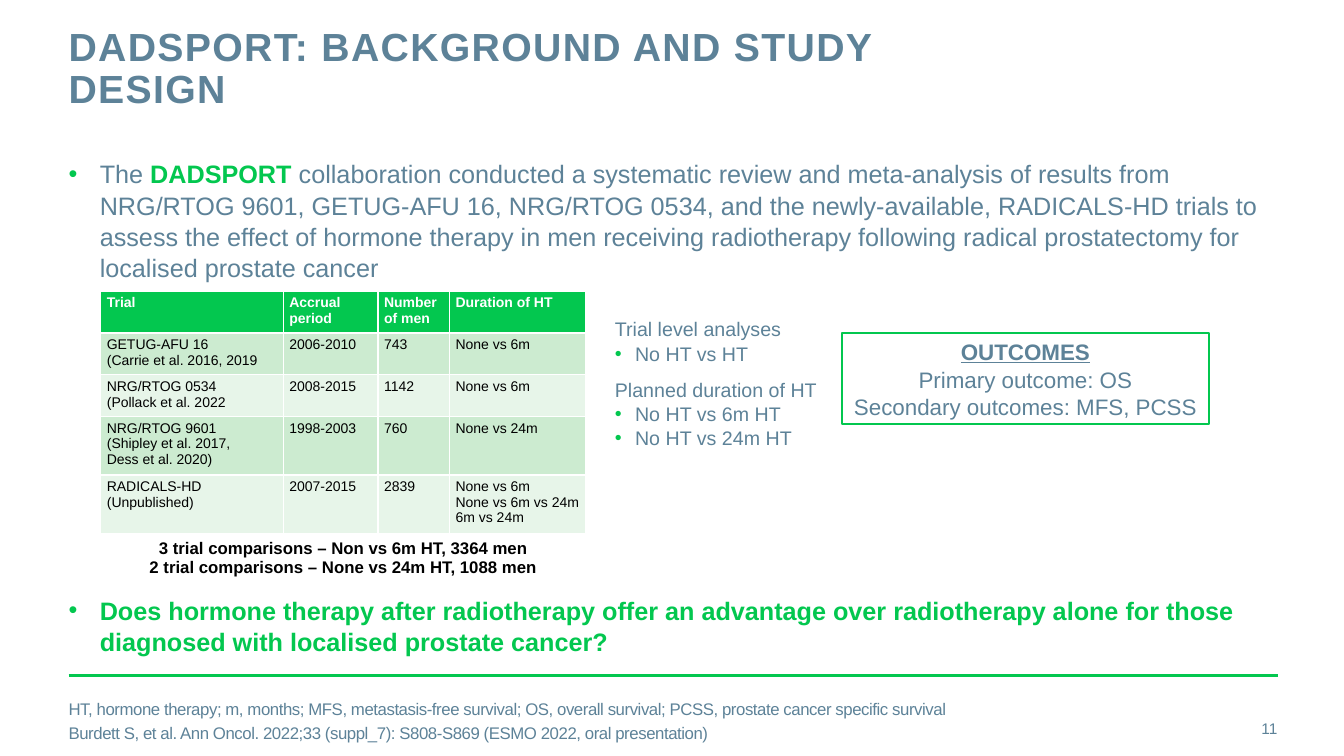
from lxml import etree
from pptx import Presentation
from pptx.dml.color import RGBColor
from pptx.enum.shapes import MSO_CONNECTOR, MSO_SHAPE
from pptx.enum.text import MSO_ANCHOR, MSO_AUTO_SIZE, PP_ALIGN
from pptx.oxml.ns import qn
from pptx.util import Inches, Pt

GREEN = RGBColor(0x03, 0xC7, 0x4F)
SLATE = RGBColor(0x5D, 0x82, 0x98)
BAND_DARK = RGBColor(0xCC, 0xEB, 0xD0)
BAND_LIGHT = RGBColor(0xE7, 0xF5, 0xE9)
WHITE = RGBColor(0xFF, 0xFF, 0xFF)
BLACK = RGBColor(0, 0, 0)


def add_text(paragraph, text, size, color=SLATE, bold=False, spacing=0):
    """Add one run per line of text, with line breaks between; spacing is in points."""
    for number, line in enumerate(text.split("\n")):
        if number:
            paragraph.add_line_break()
        run = paragraph.add_run()
        run.text = line
        run.font.name = "Arial"
        run.font.size = Pt(size)
        run.font.color.rgb = color
        run.font.bold = bold
        if spacing:
            run.font._element.set("spc", str(round(spacing * 100)))
    return run


def add_bullet(paragraph, indent):
    """Give the paragraph a green bullet with a hanging indent in inches."""
    properties = paragraph._p.get_or_add_pPr()
    properties.set("marL", str(Inches(indent)))
    properties.set("indent", str(-Inches(indent)))
    bullet_color = etree.SubElement(properties, qn("a:buClr"))
    etree.SubElement(bullet_color, qn("a:srgbClr")).set("val", str(GREEN))
    etree.SubElement(properties, qn("a:buFont")).set("typeface", "Arial")
    etree.SubElement(properties, qn("a:buChar")).set("char", "•")


prs = Presentation()
prs.slide_width, prs.slide_height = Inches(13.33), Inches(7.5)
slide = prs.slides.add_slide(prs.slide_layouts[5])
shapes = slide.shapes

# Title
title = shapes.title
title.left, title.top = Inches(0.68), Inches(0.27)
title.width, title.height = Inches(9.56), Inches(0.88)
heading = title.text_frame
heading.auto_size = MSO_AUTO_SIZE.NONE
heading.vertical_anchor = MSO_ANCHOR.TOP
heading.paragraphs[0].alignment = PP_ALIGN.LEFT
heading.paragraphs[0].line_spacing = Pt(30)
add_text(heading.paragraphs[0], "DADSPORT: BACKGROUND AND STUDY DESIGN", 28, bold=True, spacing=1)

# Frames without inner margins
background = shapes.add_textbox(Inches(0.68), Inches(1.56), Inches(11.99), Inches(1.25)).text_frame
question = shapes.add_textbox(Inches(0.68), Inches(5.89), Inches(11.99), Inches(0.62)).text_frame
footnotes = shapes.add_textbox(Inches(0.68), Inches(6.95), Inches(8.88), Inches(0.4)).text_frame
page_number = shapes.add_textbox(Inches(11.81), Inches(7.03), Inches(0.86), Inches(0.4)).text_frame
for frame in (heading, background, question, footnotes, page_number):
    frame.word_wrap = True
    frame.margin_left = frame.margin_right = frame.margin_top = frame.margin_bottom = 0

# Main bullets
for frame in (background, question):
    frame.paragraphs[0].line_spacing = 1.04
    add_bullet(frame.paragraphs[0], 0.31)
add_text(background.paragraphs[0], "The ", 18)
add_text(background.paragraphs[0], "DADSPORT ", 18, GREEN, bold=True)
add_text(
    background.paragraphs[0],
    "collaboration conducted a systematic review and meta-analysis of results from "
    "NRG/RTOG 9601, GETUG-AFU 16, NRG/RTOG 0534, and the newly-available, RADICALS-HD "
    "trials to assess the effect of hormone therapy in men receiving radiotherapy "
    "following radical prostatectomy for localised prostate cancer",
    18,
)
add_text(
    question.paragraphs[0],
    "Does hormone therapy after radiotherapy offer an advantage over radiotherapy alone "
    "for those diagnosed with localised prostate cancer?",
    18, GREEN, bold=True,
)

# Trials table
TRIALS = [
    ("Trial", "Accrual period", "Number\nof men", "Duration of HT"),
    ("GETUG-AFU 16\n(Carrie et al. 2016, 2019", "2006-2010", "743", "None vs 6m"),
    ("NRG/RTOG 0534\n(Pollack et al. 2022", "2008-2015", "1142", "None vs 6m"),
    ("NRG/RTOG 9601\n(Shipley et al. 2017,\nDess et al. 2020)", "1998-2003", "760", "None vs 24m"),
    ("RADICALS-HD\n(Unpublished)", "2007-2015", "2839", "None vs 6m\nNone vs 6m vs 24m\n6m vs 24m"),
]
COLUMN_WIDTHS = (1.81, 0.94, 0.71, 1.35)
ROW_HEIGHTS = (0.38, 0.38, 0.38, 0.52, 0.52, 0.44)
table = shapes.add_table(
    len(ROW_HEIGHTS), len(COLUMN_WIDTHS), Inches(1), Inches(2.89), Inches(4.81), Inches(2.62)
).table
for column, width in zip(table.columns, COLUMN_WIDTHS):
    column.width = Inches(width)
for row, height in zip(table.rows, ROW_HEIGHTS):
    row.height = Inches(height)
for row_number, trial in enumerate(TRIALS):
    is_header = row_number == 0
    for column_number, entry in enumerate(trial):
        cell = table.cell(row_number, column_number)
        cell.margin_left = cell.margin_right = Inches(0.06)
        cell.margin_top = cell.margin_bottom = Inches(0.04)
        cell.fill.solid()
        band = BAND_DARK if row_number % 2 else BAND_LIGHT
        cell.fill.fore_color.rgb = GREEN if is_header else band
        add_text(cell.text_frame.paragraphs[0], entry, 10, WHITE if is_header else BLACK, is_header)

summary = table.cell(5, 0)
summary.merge(table.cell(5, 3))
summary.fill.background()
summary.vertical_anchor = MSO_ANCHOR.MIDDLE
summary.margin_top = summary.margin_bottom = Inches(0.04)
summary.text_frame.paragraphs[0].alignment = PP_ALIGN.CENTER
add_text(
    summary.text_frame.paragraphs[0],
    "3 trial comparisons – Non vs 6m HT, 3364 men\n2 trial comparisons – None vs 24m HT, 1088 men",
    12, BLACK, bold=True,
)

# Analyses
analyses = shapes.add_textbox(Inches(6), Inches(3.09), Inches(2.21), Inches(1.4)).text_frame
analyses.word_wrap = False
ANALYSES = [
    ("Trial level analyses", ["No HT vs HT"]),
    ("Planned duration of HT", ["No HT vs 6m HT", "No HT vs 24m HT"]),
]
for group_number, (group, comparisons) in enumerate(ANALYSES):
    group_line = analyses.add_paragraph() if group_number else analyses.paragraphs[0]
    group_line.line_spacing = 1.04
    if group_number:
        group_line.space_before = Pt(8)
    add_text(group_line, group, 14)
    for comparison in comparisons:
        comparison_line = analyses.add_paragraph()
        comparison_line.line_spacing = 1.04
        add_bullet(comparison_line, 0.2)
        add_text(comparison_line, comparison, 14)

# Outcomes box
outcomes_box = shapes.add_shape(MSO_SHAPE.RECTANGLE, Inches(8.35), Inches(3.3), Inches(3.64), Inches(0.91))
outcomes_box.shadow.inherit = False
outcomes_box.fill.background()
outcomes_box.line.color.rgb = GREEN
outcomes_box.line.width = Pt(1.5)
outcomes = outcomes_box.text_frame
outcomes.word_wrap = False
for number, line in enumerate(["OUTCOMES", "Primary outcome: OS", "Secondary outcomes: MFS, PCSS"]):
    outcome = outcomes.add_paragraph() if number else outcomes.paragraphs[0]
    outcome.alignment = PP_ALIGN.CENTER
    outcome.line_spacing = 1.04
    outcome_run = add_text(outcome, line, 16, bold=number == 0)
    outcome_run.font.underline = number == 0

# Footer
rule = shapes.add_connector(MSO_CONNECTOR.STRAIGHT, Inches(0.68), Inches(6.7), Inches(12.68), Inches(6.7))
rule.line.color.rgb = GREEN
rule.line.width = Pt(2)
etree.SubElement(rule._element.spPr, qn("a:effectLst"))

footnotes.vertical_anchor = page_number.vertical_anchor = MSO_ANCHOR.MIDDLE
add_text(
    footnotes.paragraphs[0],
    "HT, hormone therapy; m, months; MFS, metastasis-free survival; OS, overall survival; "
    "PCSS, prostate cancer specific survival",
    12, spacing=-0.3,
)
citation = footnotes.add_paragraph()
citation.space_before = Pt(3)
add_text(
    citation,
    "Burdett S, et al. Ann Oncol. 2022;33 (suppl_7): S808-S869 (ESMO 2022, oral presentation)",
    12, spacing=-0.3,
)
page_number.paragraphs[0].alignment = PP_ALIGN.RIGHT
add_text(page_number.paragraphs[0], "11", 11)

prs.save("out.pptx")
